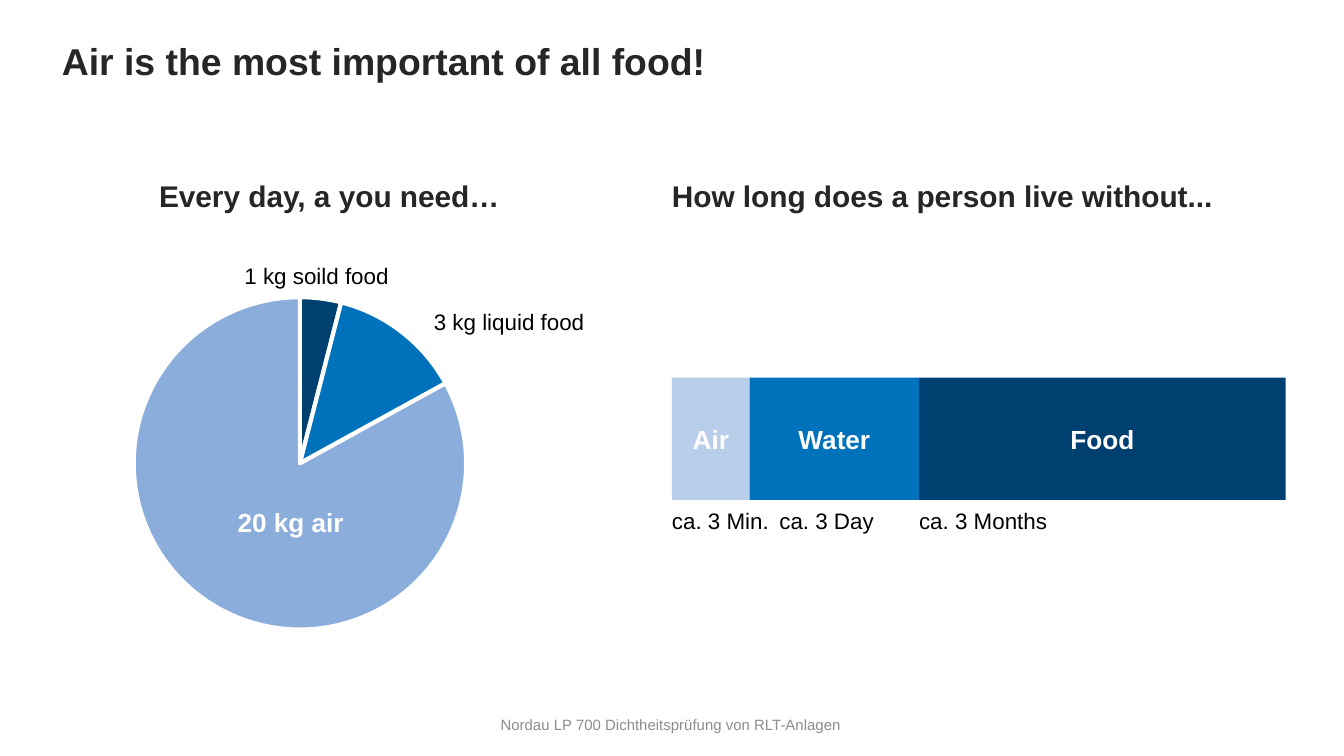
from dataclasses import dataclass

from pptx import Presentation
from pptx.chart.data import CategoryChartData
from pptx.dml.color import RGBColor
from pptx.enum.chart import XL_CHART_TYPE
from pptx.enum.shapes import MSO_SHAPE
from pptx.enum.text import MSO_ANCHOR, PP_ALIGN
from pptx.oxml import parse_xml
from pptx.oxml.ns import nsdecls
from pptx.util import Cm, Pt


@dataclass(frozen=True)
class Theme:
    font: str = "Arial"
    title: int = 20
    heading: int = 16
    label: int = 14
    body: int = 12
    footer: int = 8
    ink: str = "262626"
    black: str = "000000"
    white: str = "FFFFFF"
    grey: str = "8C8C8C"
    pale: str = "B9CEEA"
    light: str = "8BADDC"
    mid: str = "0072BC"
    dark: str = "004070"


class SlideBuilder:
    def __init__(self, slide, theme):
        self.s = slide
        self.theme = theme

    def set_text(self, sp, text, size, color, bold=False, align=PP_ALIGN.LEFT):
        p = sp.text_frame.paragraphs[0]
        p.text = text
        p.alignment = align
        p.font.name = self.theme.font
        p.font.size = Pt(size)
        p.font.bold = bold
        p.font.color.rgb = RGBColor.from_string(color)

    def text(self, box, text, size, color, bold=False, align=PP_ALIGN.LEFT,
             anchor=MSO_ANCHOR.TOP, insets=(0.25, 0.13, 0.25, 0.13)):
        """Box is left, top, width, height; insets are left, top, right, bottom; all in cm."""
        sp = self.s.shapes.add_textbox(*map(Cm, box))
        tf = sp.text_frame
        tf.word_wrap = True
        tf.vertical_anchor = anchor
        tf.margin_left, tf.margin_top, tf.margin_right, tf.margin_bottom = map(Cm, insets)
        self.set_text(sp, text, size, color, bold, align)

    def heading(self, box, text, align=PP_ALIGN.LEFT):
        self.text(box, text, self.theme.heading, self.theme.ink, True, align,
                  insets=(0, 0.25, 0, 0.1))

    def block(self, box, text, fill):
        sp = self.s.shapes.add_shape(MSO_SHAPE.RECTANGLE, *map(Cm, box))
        sp.shadow.inherit = False
        sp.fill.solid()
        sp.fill.fore_color.rgb = RGBColor.from_string(fill)
        sp.line.fill.background()
        sp.text_frame.vertical_anchor = MSO_ANCHOR.MIDDLE
        self.set_text(sp, text, self.theme.label, self.theme.white, True, PP_ALIGN.CENTER)

    def pie(self, box, values, colors, diameter):
        data = CategoryChartData()
        data.categories = [str(i + 1) for i in range(len(values))]
        data.add_series("Series 1", values)
        chart = self.s.shapes.add_chart(XL_CHART_TYPE.PIE, *map(Cm, box), data).chart
        chart.has_title = False
        chart.has_legend = False
        chart.font.name = self.theme.font
        chart.font.size = Pt(18)
        chart.font.color.rgb = RGBColor.from_string(self.theme.black)
        plot = chart.plots[0]
        plot.vary_by_categories = True
        for i, color in enumerate(colors):
            fmt = plot.series[0].points[i].format
            fmt.fill.solid()
            fmt.fill.fore_color.rgb = RGBColor.from_string(color)
            fmt.line.color.rgb = RGBColor.from_string(self.theme.white)
            fmt.line.width = Pt(2.25)
        self.center_plot(chart, diameter / box[2], diameter / box[3])

    def center_plot(self, chart, w, h):
        """Centre the plot area, with w and h as fractions of the chart."""
        area = chart._chartSpace.xpath("c:chart/c:plotArea")[0]
        for old in area.xpath("c:layout"):
            area.remove(old)
        area.insert(0, parse_xml(
            f'<c:layout {nsdecls("c")}><c:manualLayout><c:layoutTarget val="inner"/>'
            '<c:xMode val="edge"/><c:yMode val="edge"/>'
            f'<c:x val="{(1 - w) / 2:.3f}"/><c:y val="{(1 - h) / 2:.3f}"/>'
            f'<c:w val="{w:.3f}"/><c:h val="{h:.3f}"/>'
            '</c:manualLayout></c:layout>'))


def main():
    prs = Presentation()
    prs.slide_width, prs.slide_height = Cm(25.4), Cm(14.29)
    t = Theme()
    b = SlideBuilder(prs.slides.add_slide(prs.slide_layouts[6]), t)

    b.text((1.17, 0.38, 23.04, 1.52), "Air is the most important of all food!",
           t.title, t.ink, True, anchor=MSO_ANCHOR.MIDDLE, insets=(0, 0, 0, 0))

    # Survival time bar
    left, top, height = 12.7, 7.14, 2.31
    x = left
    for name, width, fill in (("Air", 1.47, t.pale), ("Water", 3.2, t.mid),
                              ("Food", 6.93, t.dark)):
        b.block((x, top, width, height), name, fill)
        x += width
    for text, x, width in (("ca. 3 Min.", left, 2.44), ("ca. 3 Day", 14.73, 3.78),
                           ("ca. 3 Months", 17.37, 4.06)):
        b.text((x, top + height, width, 0.76), text, t.body, t.black,
               insets=(0, 0.13, 0.25, 0.13))
    b.heading((left, 3.1, 11.2, 1.47), "How long does a person live without...")

    # Daily intake pie
    b.pie((1.17, 5.23, 8.99, 7.06), (4, 13, 83), (t.dark, t.mid, t.light), 6.28)
    b.text((7.95, 5.69, 3.53, 0.76), "3 kg liquid food", t.body, t.black)
    b.text((4.37, 4.83, 4.6, 0.76), "1 kg soild food", t.body, t.black)
    b.heading((2.01, 3.1, 8.43, 1.47), "Every day, a you need…", PP_ALIGN.CENTER)
    b.text((4.24, 9.45, 3.96, 0.86), "20 kg air", t.label, t.white, True)

    b.text((5.33, 13.44, 14.78, 0.51), "Nordau LP 700 Dichtheitsprüfung von RLT-Anlagen",
           t.footer, t.grey, align=PP_ALIGN.CENTER, anchor=MSO_ANCHOR.MIDDLE,
           insets=(0.1, 0.1, 0.18, 0.1))
    prs.save("out.pptx")


if __name__ == "__main__":
    main()
